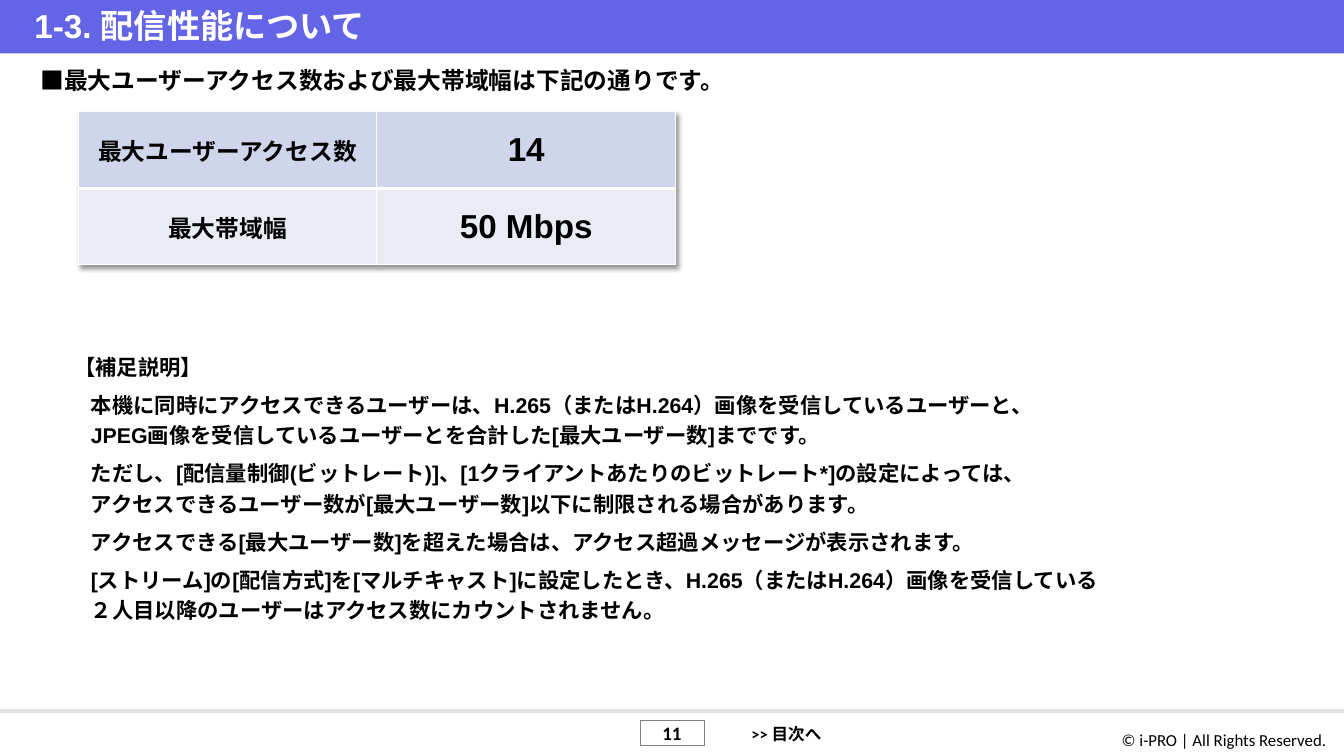
from pptx import Presentation
from pptx.dml.color import RGBColor
from pptx.enum import shapes, text
from pptx.oxml import parse_xml
from pptx.oxml.ns import nsdecls
from pptx.util import Pt

TITLE = "1-3. 配信性能について"
HEADING = "■最大ユーザーアクセス数および最大帯域幅は下記の通りです。"
LIMITS = [("最大ユーザーアクセス数", "14"), ("最大帯域幅", "50 Mbps")]
NOTE_HEADING = "【補足説明】"
NOTES = [
    ("本機に同時にアクセスできるユーザーは、H.265（またはH.264）画像を受信しているユーザーと、",
     "JPEG画像を受信しているユーザーとを合計した[最大ユーザー数]までです。"),
    ("ただし、[配信量制御(ビットレート)]、[1クライアントあたりのビットレート*]の設定によっては、",
     "アクセスできるユーザー数が[最大ユーザー数]以下に制限される場合があります。"),
    ("アクセスできる[最大ユーザー数]を超えた場合は、アクセス超過メッセージが表示されます。",),
    ("[ストリーム]の[配信方式]を[マルチキャスト]に設定したとき、H.265（またはH.264）画像を受信している",
     "２人目以降のユーザーはアクセス数にカウントされません。"),
]
PAGE = "11"
CONTENTS_LINK = ">> 目次へ"
COPYRIGHT = "© i-PRO | All Rights Reserved."

WIDTH, HEIGHT = 1134, 638
BLACK, WHITE, ACCENT, RULE, GREY = "000000", "FFFFFF", "6464E6", "E2E3E3", "808080"
ROW_FILLS = ["CFD5EA", "E9EBF5"]
COLUMN_WIDTH, ROW_HEIGHT = 252, 64.5
LEFT, CENTER, RIGHT = text.PP_ALIGN.LEFT, text.PP_ALIGN.CENTER, text.PP_ALIGN.RIGHT
TOP, MIDDLE = text.MSO_ANCHOR.TOP, text.MSO_ANCHOR.MIDDLE


def rgb(value):
    return RGBColor.from_string(value)


def box_at(*lengths):
    return [Pt(length) for length in lengths]


def write(paragraph, words, size, font="Arial", color=BLACK, bold=True, align=LEFT,
          margin=0, indent=0):
    """Fill one paragraph; margin and indent are in points."""
    paragraph.text = words
    paragraph.alignment = align
    if margin:
        properties = paragraph._p.get_or_add_pPr()
        properties.set("marL", str(Pt(margin)))
        properties.set("indent", str(Pt(indent)))
    for run in paragraph.runs:
        run.font.size, run.font.name, run.font.bold = Pt(size), font, bold
        run.font.color.rgb = rgb(color)


def add_label(place, words, size, anchor=TOP, wrap=True, **style):
    frame = slide.shapes.add_textbox(*box_at(*place)).text_frame
    frame.word_wrap, frame.vertical_anchor = wrap, anchor
    write(frame.paragraphs[0], words, size, **style)
    return frame


def add_rectangle(place):
    rectangle = slide.shapes.add_shape(shapes.MSO_SHAPE.RECTANGLE, *box_at(*place))
    rectangle.shadow.inherit = False
    return rectangle


def set_borders(cell, widths):
    """Draw white borders; widths are points for left, right, top, bottom."""
    properties = cell._tc.get_or_add_tcPr()
    for position, (side, width) in enumerate(zip("LRTB", widths)):
        properties.insert(position, parse_xml(
            f'<a:ln{side} {nsdecls("a")} w="{Pt(width)}"><a:solidFill>'
            f'<a:srgbClr val="{WHITE}"/></a:solidFill></a:ln{side}>'))


prs = Presentation()
prs.slide_width, prs.slide_height = Pt(WIDTH), Pt(HEIGHT)
slide = prs.slides.add_slide(prs.slide_layouts[6])

# Header
title_bar = add_rectangle((0, 0, WIDTH, 45))
title_bar.fill.solid()
title_bar.fill.fore_color.rgb = rgb(ACCENT)
title_bar.line.fill.background()
add_label((0, 0, WIDTH, 42.5), TITLE, 28, MIDDLE, color=WHITE, margin=22)
add_label((27, 52, 901, 32), HEADING, 20)

# Limits table
limits = slide.shapes.add_table(
    len(LIMITS), 2, *box_at(66, 94.5, 2 * COLUMN_WIDTH, len(LIMITS) * ROW_HEIGHT)).table
limits._tbl.tblPr.insert(0, parse_xml(
    f'<a:effectLst {nsdecls("a")}><a:outerShdw blurRad="50800" dist="38100" dir="2700000" '
    'algn="tl" rotWithShape="0"><a:srgbClr val="000000"><a:alpha val="40000"/></a:srgbClr>'
    '</a:outerShdw></a:effectLst>'))
for column in limits.columns:
    column.width = Pt(COLUMN_WIDTH)
for r, (row, fill) in enumerate(zip(LIMITS, ROW_FILLS)):
    limits.rows[r].height = Pt(ROW_HEIGHT)
    for c, (words, size, font) in enumerate(zip(row, (20, 28), ("Calibri", "Arial"))):
        cell = limits.cell(r, c)
        cell.fill.solid()
        cell.fill.fore_color.rgb = rgb(fill)
        cell.vertical_anchor = MIDDLE
        write(cell.text_frame.paragraphs[0], words, size, font, align=CENTER)
        set_borders(cell, (1, 1, 1, 3) if r == 0 else (1, 1, 3, 1))

# Supplementary notes
notes = add_label((55.5, 291, 1012, 147), NOTE_HEADING, 18, margin=14, indent=-14)
notes.paragraphs[0].line_spacing = 1.2
for note in NOTES:
    for position, line in enumerate(note):
        paragraph = notes.add_paragraph()
        write(paragraph, line, 18, margin=14)
        paragraph.line_spacing = 1.2
        paragraph.space_before = Pt(0 if position else 6)

# Footer
footer_rule = slide.shapes.add_connector(
    shapes.MSO_CONNECTOR.STRAIGHT, *box_at(0, 600, WIDTH, 600))
footer_rule.line.color.rgb = rgb(RULE)
footer_rule.line.width = Pt(3)
footer_rule._element.spPr.append(parse_xml(f'<a:effectLst {nsdecls("a")}/>'))
page_box = add_rectangle((540, 608, 54, 21))
page_box.fill.background()
page_box.line.color.rgb = rgb(GREY)
page_box.line.width = Pt(0.75)
page_box.text_frame.vertical_anchor = MIDDLE
write(page_box.text_frame.paragraphs[0], PAGE, 16, "Calibri", align=CENTER)
add_label((626.5, 607, 74, 24.5), CONTENTS_LINK, 14, MIDDLE, font="Calibri", align=CENTER)
add_label((937, 612, 189, 24.5), COPYRIGHT, 14.2, wrap=False, font="Calibri", bold=False,
          align=RIGHT)

prs.save("out.pptx")
